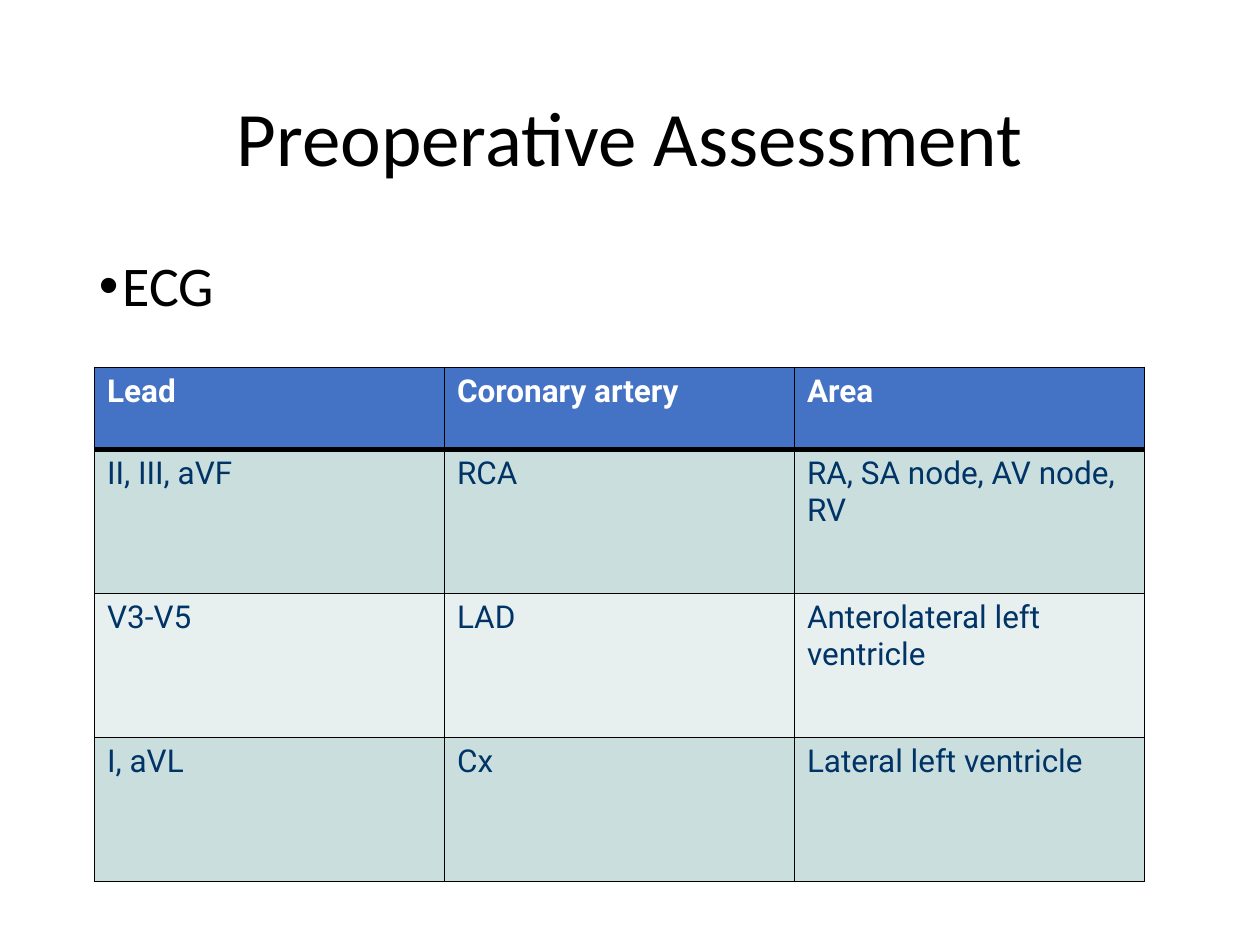
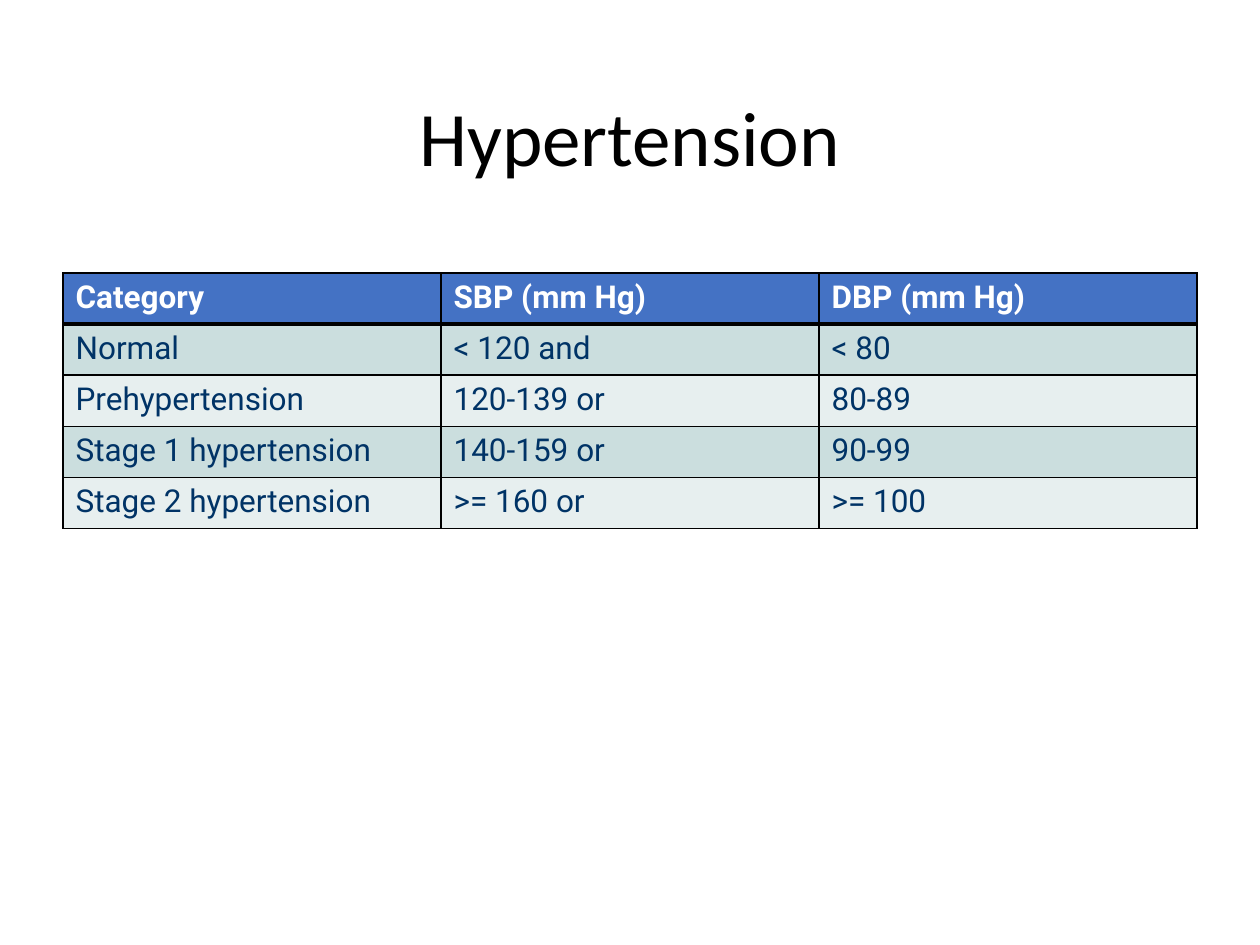
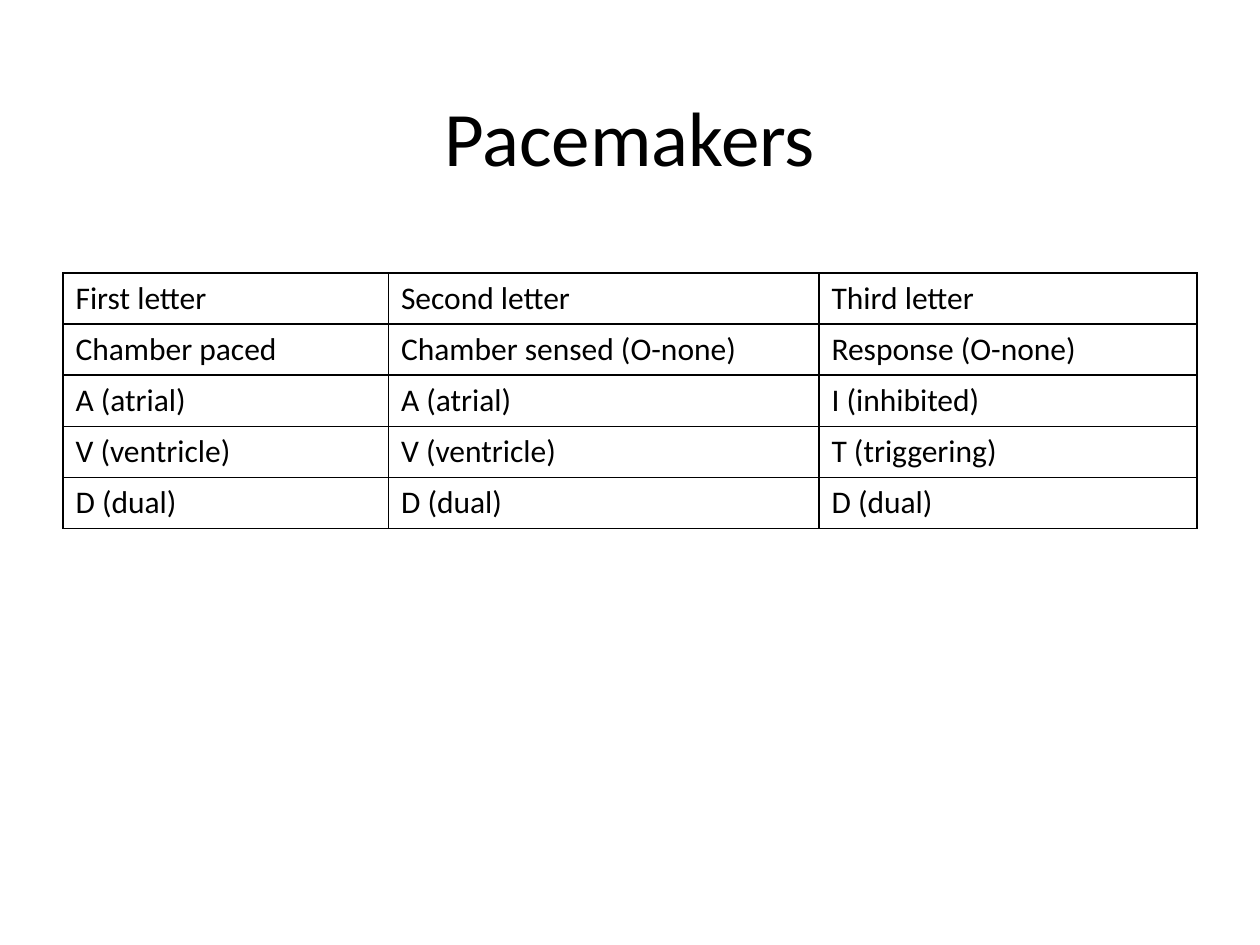
from lxml import etree
from pptx import Presentation
from pptx import util as u
from pptx.dml import color
from pptx.enum import text
from pptx.oxml import ns

COLORS = {
    "ink": "000000",
    "header": "4472C4",
    "header_text": "FFFFFF",
    "cell_text": "003366",
    "odd_band": "CBDEDE",
    "even_band": "E7EFEF",
}
TITLE_BOX = (49.5, 28.75, 621, 104.5)
BODY_BOX = (49.5, 144, 621, 342.75)
WIDE_TABLE = (36, 156)
ROW_HEIGHT = 29.2

ECG_ROWS = [
    ("Lead", "Coronary artery", "Area"),
    ("II, III, aVF", "RCA", "RA, SA node, AV node, RV"),
    ("V3-V5", "LAD", "Anterolateral left ventricle"),
    ("I, aVL", "Cx", "Lateral left ventricle"),
]
PRESSURE_ROWS = [
    ("Category", "SBP (mm Hg)", "DBP (mm Hg)"),
    ("Normal", "< 120 and", "< 80"),
    ("Prehypertension", "120-139 or", "80-89"),
    ("Stage 1 hypertension", "140-159 or", "90-99"),
    ("Stage 2 hypertension", ">= 160 or", ">= 100"),
]
PACEMAKER_ROWS = [
    ("First letter", "Second letter", "Third letter"),
    ("Chamber paced", "Chamber sensed (O-none)", "Response (O-none)"),
    ("A (atrial)", "A (atrial)", "I (inhibited)"),
    ("V (ventricle)", "V (ventricle)", "T (triggering)"),
    ("D (dual)", "D (dual)", "D (dual)"),
]


def rgb(name):
    return color.RGBColor.from_string(COLORS[name])


def add_span(para, words, size, font="Calibri", ink="ink", bold=False):
    span = para.add_run()
    span.text = words
    span.font.size = u.Pt(size)
    span.font.name = font
    span.font.bold = bold
    span.font.color.rgb = rgb(ink)


def add_text_box(page, box, words, size, anchor, align):
    frame = page.shapes.add_textbox(*map(u.Pt, box)).text_frame
    frame.word_wrap = True
    frame.vertical_anchor = anchor
    para = frame.paragraphs[0]
    para.alignment = align
    para.line_spacing = 0.9
    add_span(para, words, size)
    return para


def add_title(page, words):
    add_text_box(page, TITLE_BOX, words, 44,
                 text.MSO_ANCHOR.MIDDLE, text.PP_ALIGN.CENTER)


def add_bullet(page, box, words):
    para = add_text_box(page, box, words, 32,
                        text.MSO_ANCHOR.TOP, text.PP_ALIGN.LEFT)
    props = para._p.get_or_add_pPr()
    hang = u.Pt(13.5)
    props.set("marL", str(int(hang)))
    props.set("indent", str(-int(hang)))
    bullet_color = etree.SubElement(props, ns.qn("a:buClr"))
    etree.SubElement(bullet_color, ns.qn("a:srgbClr"), val=COLORS["ink"])
    etree.SubElement(props, ns.qn("a:buFont"), typeface="Arial")
    etree.SubElement(props, ns.qn("a:buChar"), char="•")


def add_borders(cell, top, bottom):
    props = cell._tc.get_or_add_tcPr()
    for side, width in (("L", 1), ("R", 1), ("T", top), ("B", bottom)):
        line = etree.SubElement(props, ns.qn(f"a:ln{side}"),
                                w=str(int(u.Pt(width))))
        fill = etree.SubElement(line, ns.qn("a:solidFill"))
        etree.SubElement(fill, ns.qn("a:srgbClr"), val=COLORS["ink"])


def row_style(index, banded):
    if not banded:
        return None, {}
    if index == 0:
        return "header", {"font": "Roboto", "ink": "header_text", "bold": True}
    band = "odd_band" if index % 2 else "even_band"
    return band, {"font": "Roboto", "ink": "cell_text"}


def add_grid(page, corner, widths, heights, rows, banded=True):
    box = (*corner, sum(widths), sum(heights))
    table = page.shapes.add_table(len(rows), len(widths), *map(u.Pt, box)).table
    table.first_row = table.horz_banding = False
    for column, width in zip(table.columns, widths):
        column.width = u.Pt(width)
    rule = 3 if banded else 1
    for index, (row, height, entries) in enumerate(zip(table.rows, heights, rows)):
        row.height = u.Pt(height)
        band, style = row_style(index, banded)
        for cell, words in zip(row.cells, entries):
            add_borders(cell, top=rule if index == 1 else 1,
                        bottom=rule if index == 0 else 1)
            if band:
                cell.fill.solid()
                cell.fill.fore_color.rgb = rgb(band)
            else:
                cell.fill.background()
            add_span(cell.text_frame.paragraphs[0], words, 18, **style)


def add_page(deck, title):
    page = deck.slides.add_slide(deck.slide_layouts[6])
    add_title(page, title)
    return page


def main():
    deck = Presentation()
    deck.slide_width, deck.slide_height = u.Pt(720), u.Pt(540)

    page = add_page(deck, "Preoperative Assessment")
    add_bullet(page, BODY_BOX, "ECG")
    add_grid(page, (54, 210), [200] * 3, [46.8] + [82.3] * 3, ECG_ROWS)

    page = add_page(deck, "Hypertension")
    add_grid(page, WIDE_TABLE, [216] * 3, [ROW_HEIGHT] * 5, PRESSURE_ROWS)

    page = add_page(deck, "Pacemakers")
    add_grid(page, WIDE_TABLE, [186, 246, 216], [ROW_HEIGHT] * 5,
             PACEMAKER_ROWS, banded=False)

    deck.save("out.pptx")


if __name__ == "__main__":
    main()
